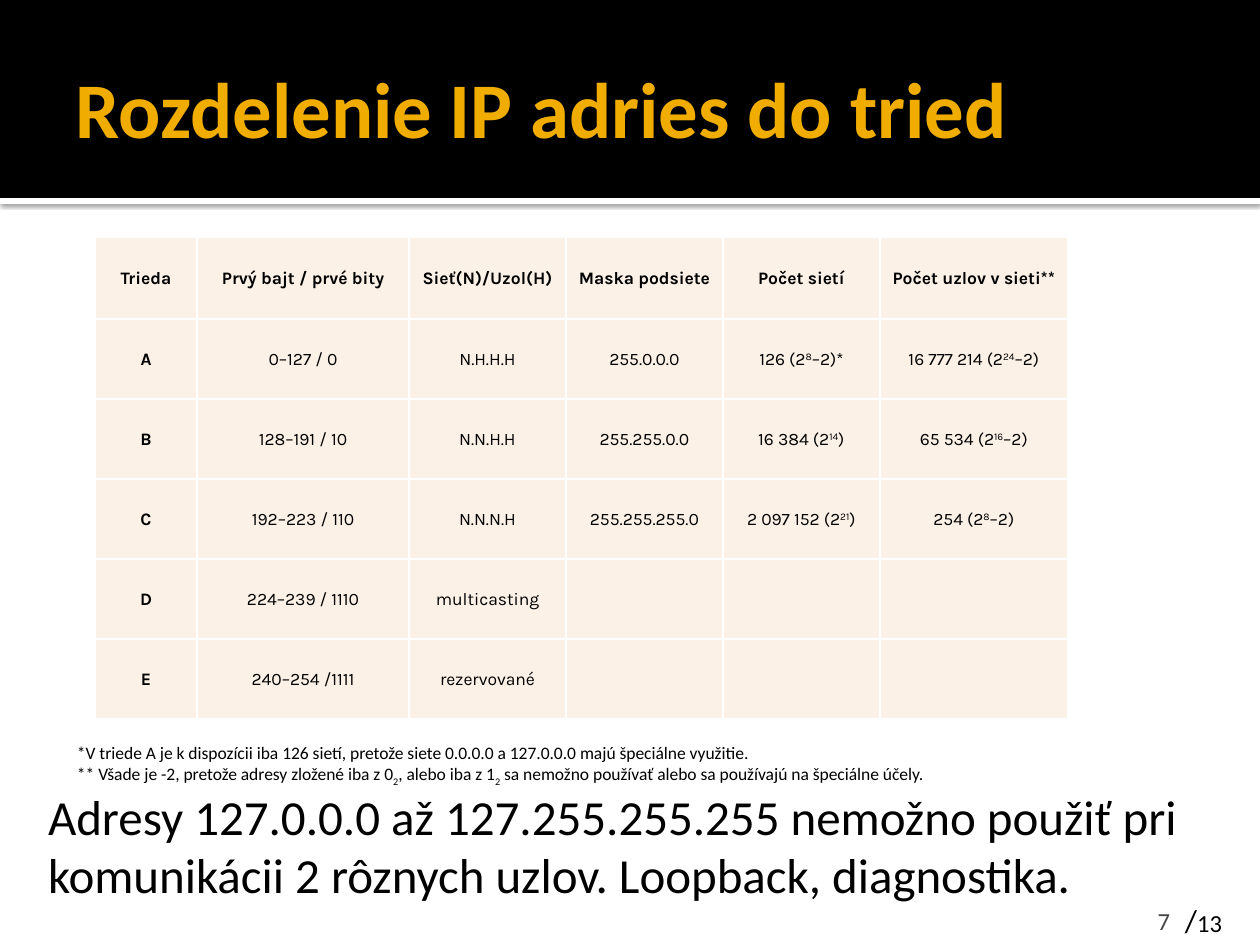
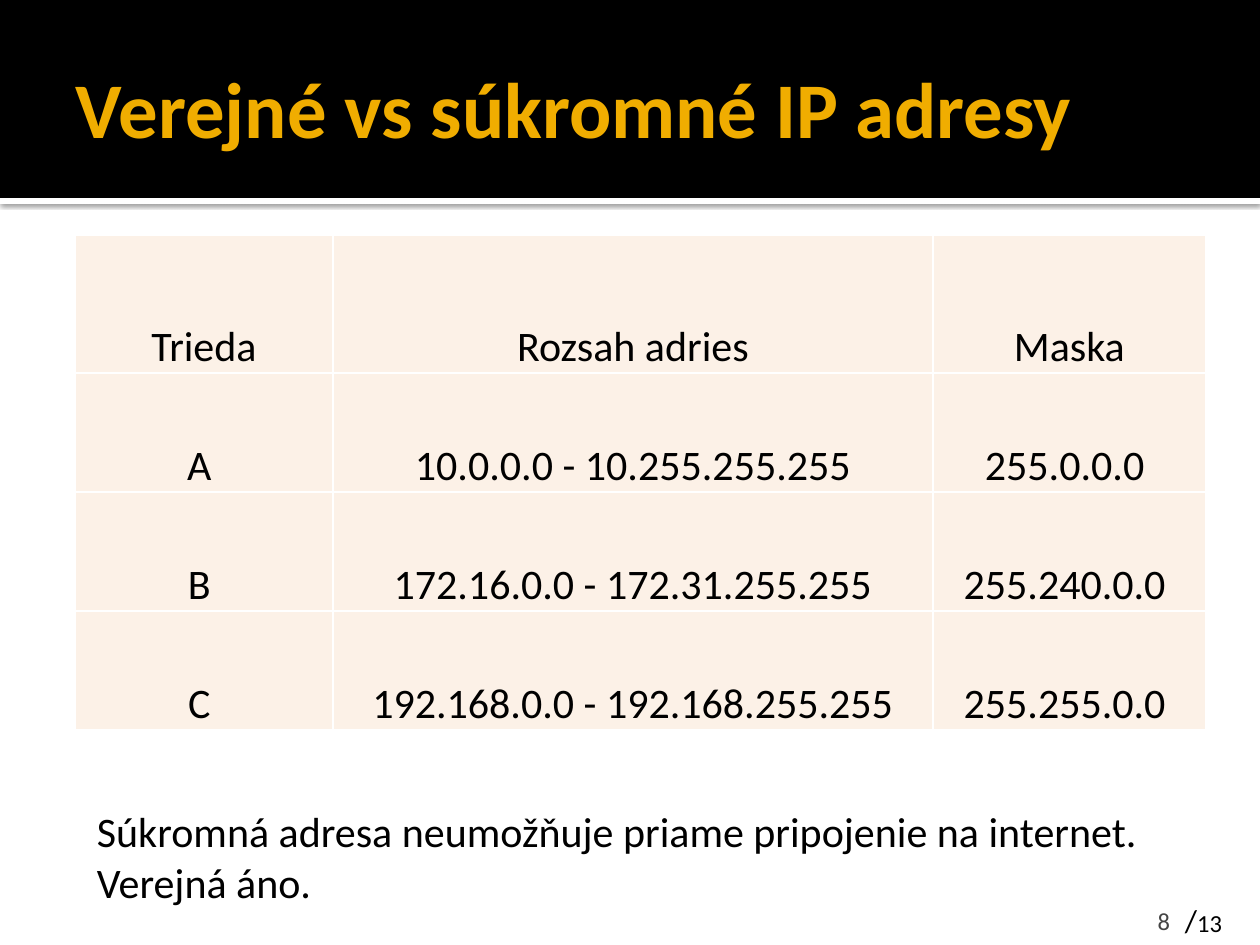
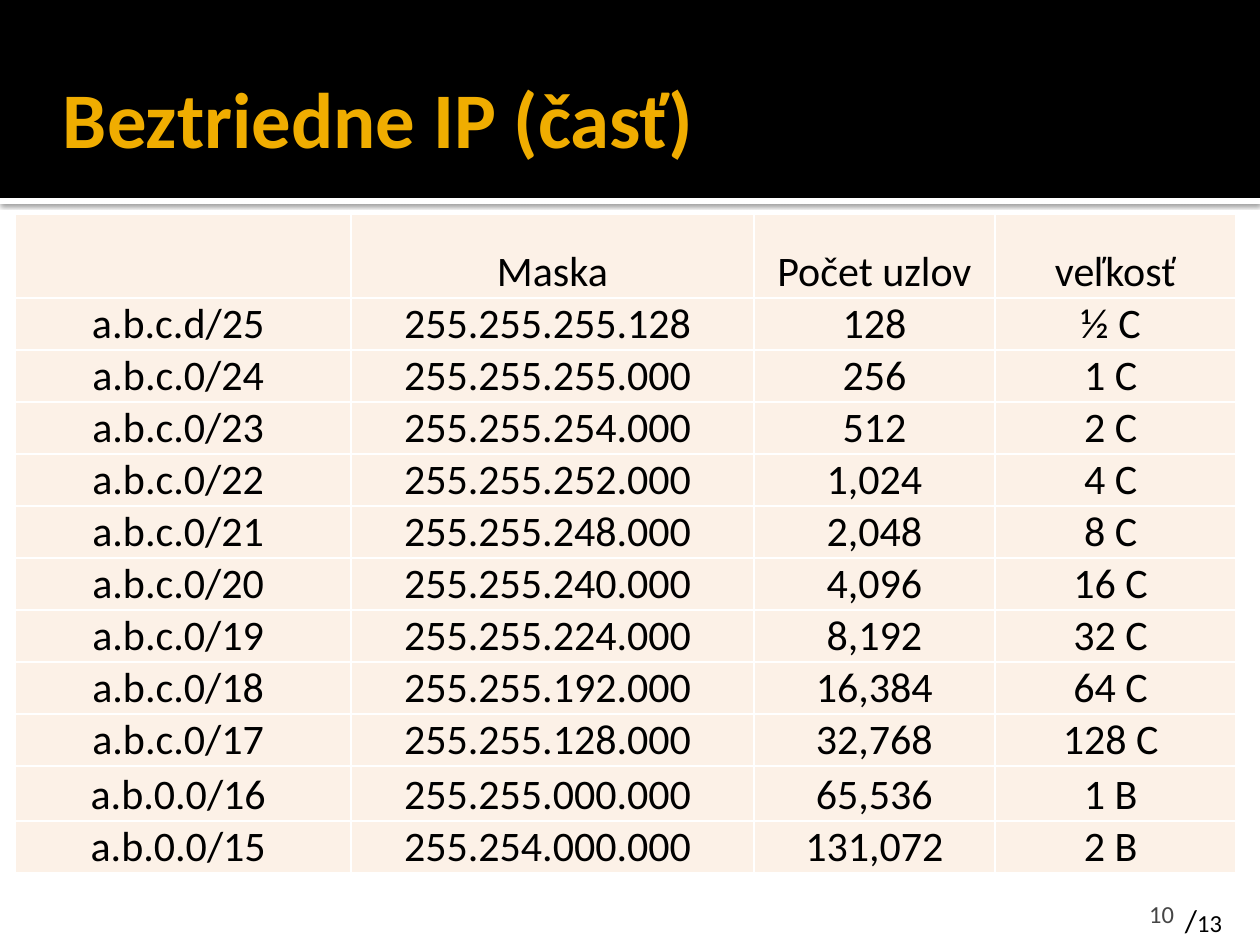
"""Build three slides about IP address classes, private ranges and classless masks."""
import dataclasses

import lxml.etree
import pptx
import pptx.dml.color
import pptx.enum.shapes
import pptx.enum.text
import pptx.oxml.ns
import pptx.util


@dataclasses.dataclass(frozen=True)
class Theme:
    ink: str = "000000"
    paper: str = "FFFFFF"
    gold: str = "F0AD00"
    grey: str = "454545"
    cream: str = "FCF1E7"
    font: str = "Calibri"
    alt: str = "Karla"
    title: int = 45
    lead: int = 28
    body: int = 24
    slash: int = 18
    page: int = 14
    note: int = 10


theme = Theme()
px = 914400 / 126
qn = pptx.oxml.ns.qn
rgb = pptx.dml.color.RGBColor.from_string
align = pptx.enum.text.PP_ALIGN
anchor = pptx.enum.text.MSO_ANCHOR
sides = ("margin_left", "margin_top", "margin_right", "margin_bottom")


def write(frame, lines, size, color=theme.ink, font=theme.font, bold=False, shift=0, para=None):
    """Fill a frame with lines; parts between bars are raised or lowered by shift."""
    for row, line in enumerate(lines):
        item = frame.add_paragraph() if row else frame.paragraphs[0]
        for name, value in (para or {}).items():
            setattr(item, name, value)
        for spot, part in enumerate(line.split("|")):
            run = item.add_run()
            run.text = part
            look = {"size": pptx.util.Pt(size), "name": font, "bold": bold}
            for name, value in look.items():
                setattr(run.font, name, value)
            run.font.color.rgb = rgb(color)
            if spot % 2 and shift:
                run.font._element.set("baseline", str(shift * 1000))


def label(slide, box, lines, size, mid=anchor.TOP, pads=(13, 6, 13, 6), **look):
    """Add a wrapped text box and return its frame."""
    frame = slide.shapes.add_textbox(*(round(n * px) for n in box)).text_frame
    frame.word_wrap = True
    frame.vertical_anchor = mid
    for side, pad in zip(sides, pads):
        setattr(frame, side, round(pad * px))
    write(frame, lines, size, **look)
    return frame


classes = [
    ("Trieda", "Prvý bajt / prvé bity", "Sieť(N)/Uzol(H)", "Maska podsiete", "Počet sietí", "Počet uzlov v sieti**"),
    ("A", "0–127 / 0", "N.H.H.H", "255.0.0.0", "126 (2|8|–2)*", "16 777 214 (2|24|–2)"),
    ("B", "128–191 / 10", "N.N.H.H", "255.255.0.0", "16 384 (2|14|)", "65 534 (2|16|–2)"),
    ("C", "192–223 / 110", "N.N.N.H", "255.255.255.0", "2 097 152 (2|21|)", "254 (2|8|–2)"),
    ("D", "224–239 / 1110", "multicasting", "", "", ""),
    ("E", "240–254 /1111", "rezervované", "", "", ""),
]
ranges = [
    ("Trieda", "Rozsah adries", "Maska"),
    ("A ", "10.0.0.0 - 10.255.255.255", "255.0.0.0 "),
    ("B ", "172.16.0.0 - 172.31.255.255", "255.240.0.0 "),
    ("C ", "192.168.0.0 - 192.168.255.255", "255.255.0.0 "),
]
masks = [("", "Maska", "Počet uzlov", "veľkosť")]
for bits in range(25, 14, -1):
    hosts = 2 ** (32 - bits)
    mask = ".".join(f"{n:03}" for n in (2 ** 32 - hosts).to_bytes(4, "big"))
    base = "a.b.c.d" if bits > 24 else "a.b.c.0" if bits > 16 else "a.b.0.0"
    span = "½ C" if bits > 24 else f"{hosts // 256} C" if bits > 16 else f"{hosts // 65536} B"
    masks.append((f"{base}/{bits} ", f"{mask} ", f"{hosts:,}", f"{span} "))

small = {"size": theme.note, "font": theme.alt, "shift": 30,
         "para": {"alignment": align.CENTER, "line_spacing": 1.07, "space_after": pptx.util.Pt(8)}}
large = {"size": theme.body, "para": {"alignment": align.CENTER}}

pages = [
    {"title": "Rozdelenie IP adries do tried", "head": (63, 21), "page": "7", "foot": (1082, 886, 101, 49),
     "at": (95, 237), "cols": (102, 212, 157, 157, 157, 188), "rows": [82] + [80] * 5,
     "cells": classes, "look": small, "mid": anchor.MIDDLE, "bold": True,
     "notes": [
         {"box": (35, 780, 1181, 131), "size": theme.lead, "lines": [
             "Adresy 127.0.0.0 až 127.255.255.255 nemožno použiť pri komunikácii 2 rôznych uzlov. "
             "Loopback, diagnostika."]},
         {"box": (64, 737, 1002, 55), "size": theme.note, "mid": anchor.MIDDLE, "shift": -30, "lines": [
             "*V triede A je k dispozícii iba 126 sietí, pretože siete 0.0.0.0 a 127.0.0.0 majú špeciálne využitie.",
             "** Všade je -2, pretože adresy zložené iba z 0|2|, alebo iba z 1|2| sa nemožno používať "
             "alebo sa používajú na špeciálne účely."]}]},
    {"title": "Verejné vs súkromné IP adresy", "head": (63, 21), "page": "8", "foot": (1082, 886, 101, 49),
     "at": (75, 235), "cols": (258, 600, 273), "rows": [138] + [119] * 3,
     "cells": ranges, "look": large, "mid": anchor.BOTTOM, "bold": False,
     "notes": [
         {"box": (84, 800, 1121, 115), "size": theme.body, "lines": [
             "Súkromná adresa neumožňuje priame pripojenie na internet.", "Verejná áno."]}]},
    {"title": "Beztriedne IP (časť)", "head": (50, 30), "page": "10", "foot": (1086, 893, 101, 35),
     "at": (15, 214), "cols": (336, 403, 241, 241), "rows": [84] + [52] * 9 + [55, 52],
     "cells": masks, "look": large, "mid": anchor.BOTTOM, "bold": False, "notes": []},
]

deck = pptx.Presentation()
deck.slide_width = round(1260 * px)
deck.slide_height = round(945 * px)

for page in pages:
    slide = deck.slides.add_slide(deck.slide_layouts[6])
    for top, high, color in ((198, 6, theme.paper), (0, 198, theme.ink)):
        band = slide.shapes.add_shape(pptx.enum.shapes.MSO_SHAPE.RECTANGLE, 0, round(top * px),
                                      deck.slide_width, round(high * px))
        band.fill.solid()
        band.fill.fore_color.rgb = rgb(color)
        band.line.fill.background()
        band.shadow.inherit = False
        if top:
            glow = lxml.etree.SubElement(band._element.spPr.find(qn("a:effectLst")), qn("a:outerShdw"),
                                         blurRad="31750", dist="10160", dir="5400000", rotWithShape="0")
            tint = lxml.etree.SubElement(glow, qn("a:srgbClr"), val=theme.ink)
            lxml.etree.SubElement(tint, qn("a:alpha"), val="60000")

    total = label(slide, (1172, 895, 88, 50), ["/|13"], theme.slash)
    total.paragraphs[0].runs[1].font.size = pptx.util.Pt(theme.page)
    label(slide, (*page["head"], 1134, 173), [page["title"]], theme.title, anchor.MIDDLE, (13, 6, 6, 6),
          color=theme.gold, bold=True)
    label(slide, page["foot"], [page["page"]], theme.page, anchor.BOTTOM, (13, 6, 13, 0),
          color=theme.grey, para={"alignment": align.RIGHT})
    for note in page["notes"]:
        label(slide, **note)

    cols, rows = page["cols"], page["rows"]
    box = (*page["at"], sum(cols), sum(rows))
    grid = slide.shapes.add_table(len(rows), len(cols), *(round(n * px) for n in box)).table
    grid.first_row = grid.horz_banding = False
    for col, wide in zip(grid.columns, cols):
        col.width = round(wide * px)
    for row, high in zip(grid.rows, rows):
        row.height = round(high * px)
    for r, texts in enumerate(page["cells"]):
        for c, text in enumerate(texts):
            cell = grid.cell(r, c)
            cell.fill.solid()
            cell.fill.fore_color.rgb = rgb(theme.cream)
            cell.vertical_anchor = page["mid"]
            for side, pad in zip(sides, (1, 1, 1, 0)):
                setattr(cell, side, round(pad * px))
            for spot, edge in enumerate(("a:lnL", "a:lnR", "a:lnT", "a:lnB")):
                rule = lxml.etree.Element(qn(edge), w="12700")
                fill = lxml.etree.SubElement(rule, qn("a:solidFill"))
                lxml.etree.SubElement(fill, qn("a:srgbClr"), val=theme.paper)
                cell._tc.tcPr.insert(spot, rule)
            if text:
                write(cell.text_frame, [text], bold=page["bold"] and 0 in (r, c), **page["look"])

deck.save("out.pptx")
